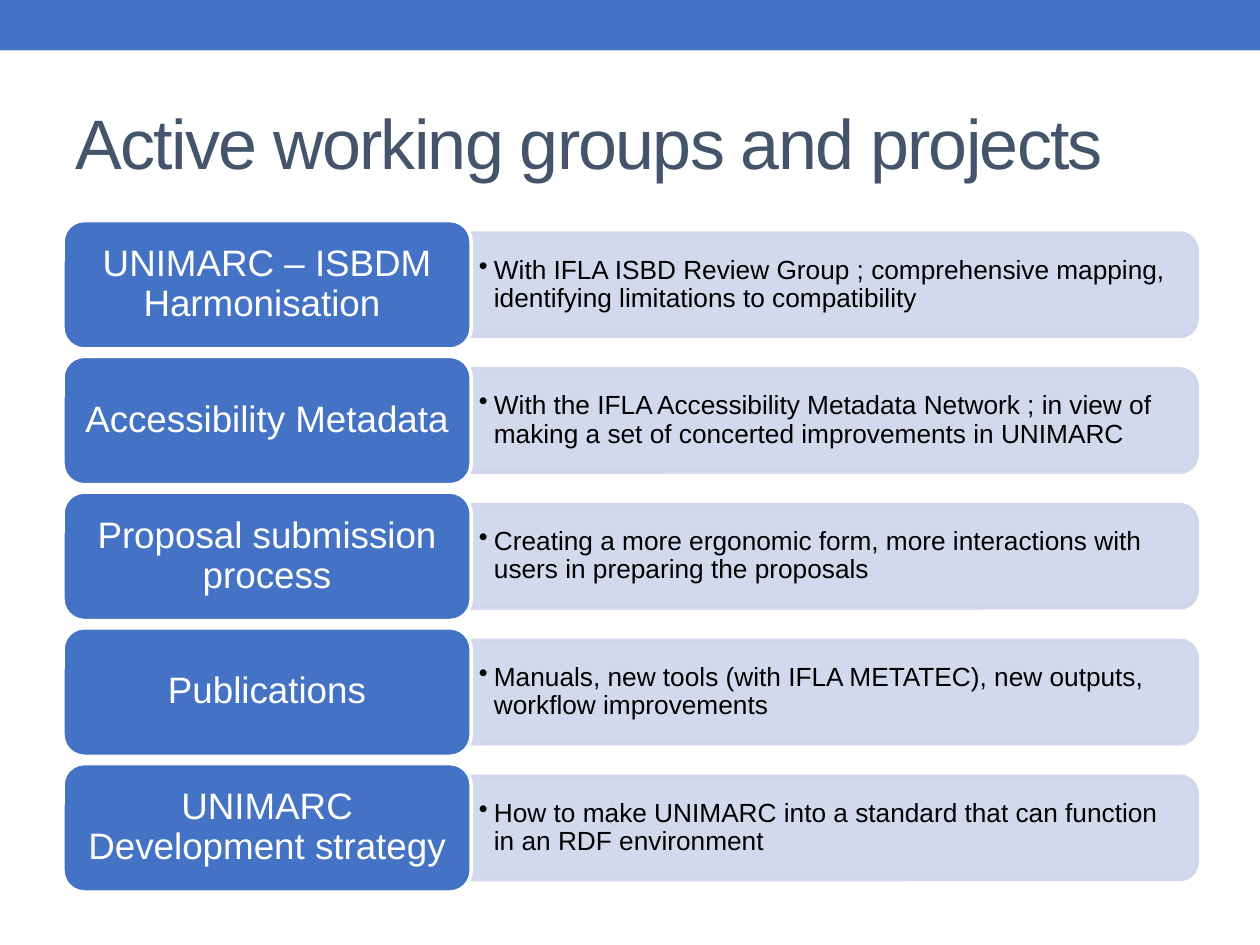
from lxml.etree import SubElement
from pptx import Presentation
from pptx.dml.color import RGBColor
from pptx.enum.shapes import MSO_SHAPE
from pptx.enum.text import MSO_ANCHOR, PP_ALIGN
from pptx.oxml.ns import qn
from pptx.util import Inches, Pt

COLORS = {
    "blue": "4472C4",
    "pale": "CFD5EA",
    "slate": "44546A",
    "white": "FFFFFF",
    "black": "000000",
}
FONT = "Arial"
BORDER = Pt(2.08)

GROUPS = [
    ("UNIMARC – ISBDM Harmonisation ",
     "With IFLA ISBD Review Group ; comprehensive mapping, identifying limitations to compatibility"),
    ("Accessibility Metadata",
     "With the IFLA Accessibility Metadata Network ; in view of making a set of concerted "
     "improvements in UNIMARC"),
    ("Proposal submission process",
     "Creating a more ergonomic form, more interactions with users in preparing the proposals"),
    ("Publications",
     "Manuals, new tools (with IFLA METATEC), new outputs, workflow improvements"),
    ("UNIMARC Development strategy",
     "How to make UNIMARC into a standard that can function in an RDF environment"),
]


def color(name):
    return RGBColor.from_string(COLORS[name])


def add_panel(page, kind, left, top, width, height, fill, line=None):
    panel = page.shapes.add_shape(kind, left, top, width, height)
    panel.shadow.inherit = False
    panel.fill.solid()
    panel.fill.fore_color.rgb = color(fill)
    if line:
        panel.line.color.rgb = color(line)
        panel.line.width = BORDER
    else:
        panel.line.fill.background()
    return panel


def set_opacity(panel, percent):
    for tint in panel._element.spPr.iter(qn("a:srgbClr")):
        SubElement(tint, qn("a:alpha"), val=str(percent * 1000))


def write_text(box, text, size, ink, align, side, edge):
    frame = box.text_frame
    frame.word_wrap = True
    frame.vertical_anchor = MSO_ANCHOR.MIDDLE
    frame.margin_left = frame.margin_right = Inches(side)
    frame.margin_top = frame.margin_bottom = Inches(edge)
    para = frame.paragraphs[0]
    para.text = text
    para.alignment = align
    para.font.name = FONT
    para.font.size = Pt(size)
    para.font.color.rgb = color(ink)
    return para


def add_bullet(para, indent):
    properties = para._p.get_or_add_pPr()
    properties.set("marL", str(indent))
    properties.set("indent", str(-indent))
    bullet = properties.makeelement(qn("a:buChar"), {"char": "•"})
    properties.insert_element_before(bullet, "a:tabLst", "a:defRPr", "a:extLst")


def add_title(page, left, top, width, height):
    title = page.shapes.title
    title.left, title.top, title.width, title.height = left, top, width, height
    para = write_text(title, "Active working groups and projects", 40, "slate",
                      PP_ALIGN.LEFT, 0.1, 0.05)
    para.runs[0].font._element.set("spc", "-100")


def add_detail(page, text, left, top, width, height):
    turned_left = left + (width - height) // 2
    turned_top = top + (height - width) // 2
    panel = add_panel(page, MSO_SHAPE.ROUND_2_SAME_RECTANGLE, turned_left, turned_top,
                      height, width, "pale", "pale")
    panel.rotation = 90
    set_opacity(panel, 90)

    inset = Inches(0.04)
    box = page.shapes.add_textbox(left, top + inset, width - inset, height - 2 * inset)
    para = write_text(box, text, 15, "black", PP_ALIGN.LEFT, 0.06, 0.03)
    para.line_spacing = 0.9
    add_bullet(para, Inches(0.12))


def add_label(page, text, left, top, width, height):
    label = add_panel(page, MSO_SHAPE.ROUNDED_RECTANGLE, left, top, width, height,
                      "blue", "white")
    para = write_text(label, text, 21, "white", PP_ALIGN.CENTER, 0.09, 0.04)
    para.line_spacing = 0.9


def add_group_list(page, left, top, width, height):
    label_width, label_height = Inches(3.24), Inches(1.02)
    detail_height = Inches(0.82)
    pitch = (height - label_height) // (len(GROUPS) - 1)
    for index, (name, detail) in enumerate(GROUPS):
        row_top = top + index * pitch
        add_detail(page, detail, left + label_width,
                   row_top + (label_height - detail_height) // 2,
                   width - label_width, detail_height)
        add_label(page, name, left, row_top, label_width, label_height)


def main():
    deck = Presentation()
    deck.slide_width, deck.slide_height = Inches(10), Inches(7.5)
    page = deck.slides.add_slide(deck.slide_layouts[5])
    add_panel(page, MSO_SHAPE.RECTANGLE, 0, 0, deck.slide_width, Inches(0.4), "blue")
    add_title(page, Inches(0.5), Inches(0.58), Inches(9), Inches(1.08))
    add_group_list(page, Inches(0.5), Inches(1.75), Inches(9), Inches(5.33))
    deck.save("out.pptx")


if __name__ == "__main__":
    main()
